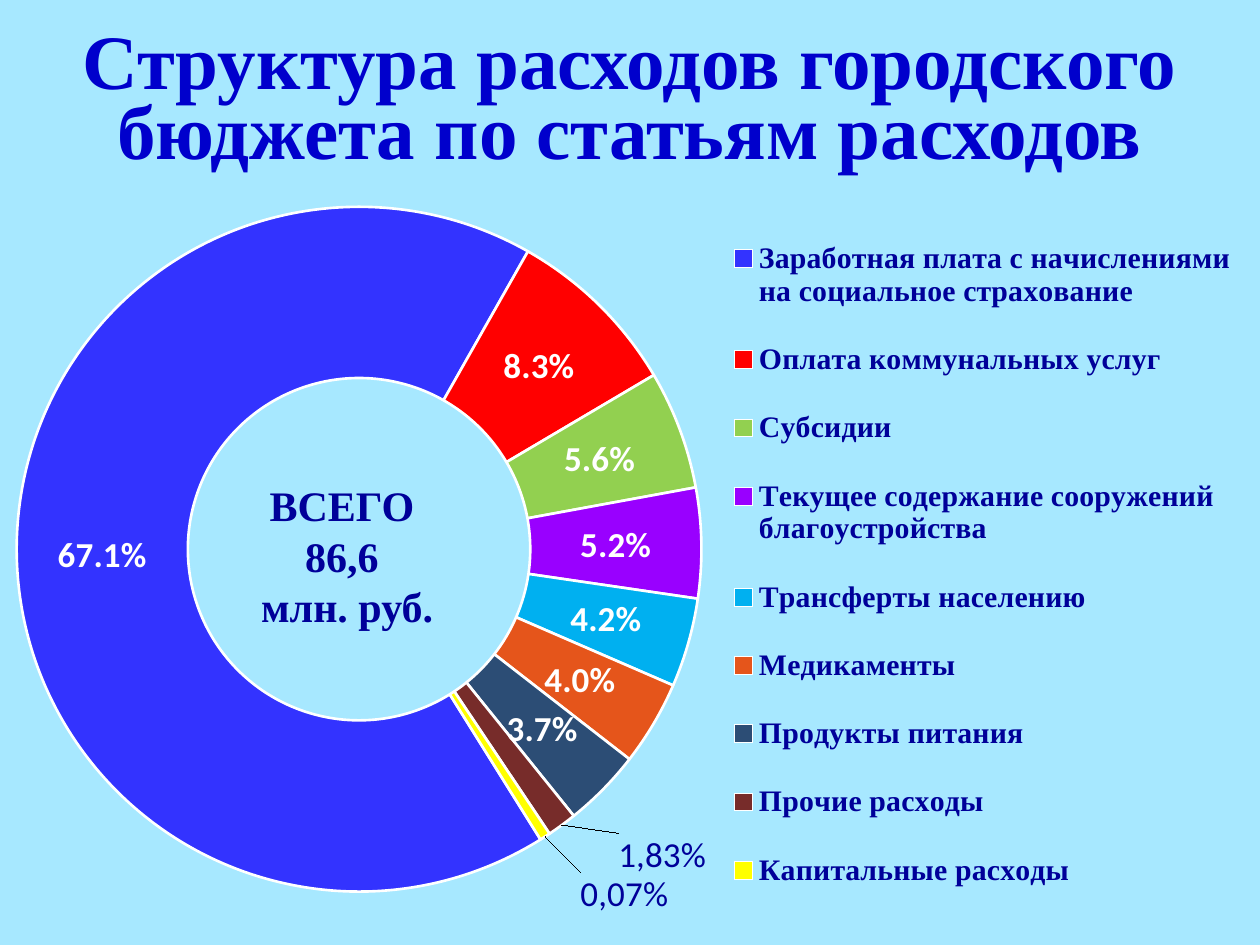
from dataclasses import dataclass

from lxml.etree import SubElement
from pptx import Presentation
from pptx.chart.chart import Chart
from pptx.chart.data import CategoryChartData as Data
from pptx.dml.color import RGBColor as Rgb
from pptx.enum.chart import XL_CHART_TYPE as Kind, XL_LEGEND_POSITION as Side
from pptx.enum.text import MSO_ANCHOR as Anchor, PP_ALIGN as Align
from pptx.oxml.ns import qn
from pptx.slide import Slide
from pptx.text.text import Font
from pptx.util import Cm, Pt


@dataclass(frozen=True)
class Theme:
    back: str = "A7E8FF"
    head: str = "0000CC"
    ink: str = "000099"
    white: str = "FFFFFF"
    serif: str = "Times New Roman"
    sans: str = "Calibri"
    title: int = 44
    lead: int = 40
    total: int = 24
    label: int = 20
    legend: int = 17
    edge: float = 1.5


@dataclass(frozen=True)
class Share:
    name: str
    value: float
    color: str
    note: str = ""
    shift: tuple[float, float] = (0, 0)


@dataclass(frozen=True)
class Box:
    left: float
    top: float
    width: float
    height: float

    def cm(self) -> tuple[Cm, ...]:
        return tuple(map(Cm, (self.left, self.top, self.width, self.height)))


THEME = Theme()
TITLE = "Структура расходов городского бюджета по статьям расходов"
TOTAL = ["ВСЕГО ", "86,6 ", "млн. руб."]
SHARES = [
    Share("Заработная плата с начислениями на социальное страхование", 0.671, "3333FF"),
    Share("Оплата коммунальных услуг", 0.083, "FF0000"),
    Share("Субсидии", 0.056, "92D050"),
    Share("Текущее содержание сооружений благоустройства", 0.052, "9900FF"),
    Share("Трансферты населению", 0.042, "00B0F0"),
    Share("Медикаменты", 0.04, "E5551B"),
    Share("Продукты питания", 0.037, "2C4D75"),
    Share("Прочие расходы ", 0.014, "772C2A", "1,83%", (0.12, 0.13)),
    Share("Капитальные расходы", 0.005, "FFFF00", "0,07%", (0.1, 0.17)),
]


def style(font: Font, face: str, size: int, color: str, bold: bool = True) -> None:
    font.name, font.size, font.bold = face, Pt(size), bold
    font.color.rgb = Rgb.from_string(color)


def add_text(slide: Slide, box: Box, lines: list[str], size: int,
             color: str, lead: int | None = None) -> None:
    frame = slide.shapes.add_textbox(*box.cm()).text_frame
    frame.word_wrap = True
    frame.vertical_anchor = Anchor.MIDDLE
    for i, line in enumerate(lines):
        para = frame.add_paragraph() if i else frame.paragraphs[0]
        para.alignment = Align.CENTER
        if lead:
            para.line_spacing = Pt(lead)
        run = para.add_run()
        run.text = line
        style(run.font, THEME.serif, size, color)


def place(host, pos: int, **spot: float | str) -> None:
    """Give a chart part a manual layout as its child number pos."""
    for old in host.findall(qn("c:layout")):
        host.remove(old)
    outer = SubElement(host, qn("c:layout"))
    host.insert(pos, outer)
    inner = SubElement(outer, qn("c:manualLayout"))
    for tag, val in spot.items():
        SubElement(inner, qn(f"c:{tag}")).set("val", str(val))


def paint(chart: Chart, shares: list[Share]) -> None:
    """Colour the slices and write their labels."""
    ring = chart.plots[0]
    ring.vary_by_categories = True
    series = ring.series[0]
    labels = series.data_labels
    labels.show_value = True
    labels.number_format, labels.number_format_is_linked = "0.0%", False
    style(labels.font, THEME.sans, THEME.label, THEME.white)
    for i, share in enumerate(shares):
        point = series.points[i]
        point.format.fill.solid()
        point.format.fill.fore_color.rgb = Rgb.from_string(share.color)
        point.format.line.color.rgb = Rgb.from_string(THEME.white)
        point.format.line.width = Pt(THEME.edge)
        if share.note:
            run = point.data_label.text_frame.paragraphs[0].add_run()
            run.text = share.note
            style(run.font, THEME.sans, THEME.label, THEME.ink, False)
    noted = [share for share in shares if share.note]
    for tag, share in zip(chart.element.xpath(".//c:dLbl"), noted):
        place(tag, 1, x=share.shift[0], y=share.shift[1])


def add_ring(slide: Slide, box: Box, shares: list[Share]) -> None:
    data = Data(number_format="0.0%")
    data.categories = [share.name for share in shares]
    data.add_series("Series 1", [share.value for share in shares])
    chart = slide.shapes.add_chart(Kind.DOUGHNUT, *box.cm(), data).chart
    style(chart.font, THEME.sans, 10, "000000", False)
    chart.has_title = False
    chart.has_legend = True
    chart.legend.position = Side.RIGHT
    chart.legend.include_in_layout = False
    style(chart.legend.font, THEME.serif, THEME.legend, THEME.ink)
    paint(chart, shares)

    root = chart.element
    root.xpath(".//c:firstSliceAng")[0].set("val", "148")
    root.xpath(".//c:holeSize")[0].set("val", "37")
    place(root.xpath(".//c:plotArea")[0], 0, layoutTarget="inner", xMode="edge",
          yMode="edge", x=0.01, y=0.03, w=0.55, h=0.9)
    place(root.xpath(".//c:legend")[0], 1, xMode="edge", yMode="edge",
          x=0.57, y=0.03, w=0.42, h=0.94)


def main() -> None:
    deck = Presentation()
    deck.slide_width, deck.slide_height = Cm(25.4), Cm(19.05)
    slide = deck.slides.add_slide(deck.slide_layouts[6])
    slide.background.fill.solid()
    slide.background.fill.fore_color.rgb = Rgb.from_string(THEME.back)
    add_text(slide, Box(1.27, 0.53, 22.86, 3.18), [TITLE], THEME.title,
             THEME.head, THEME.lead)
    add_ring(slide, Box(0, 3.71, 25.4, 15.34), SHARES)
    add_text(slide, Box(4.7, 9.53, 4.6, 3.33), TOTAL, THEME.total, THEME.ink)
    deck.save("out.pptx")


if __name__ == "__main__":
    main()
